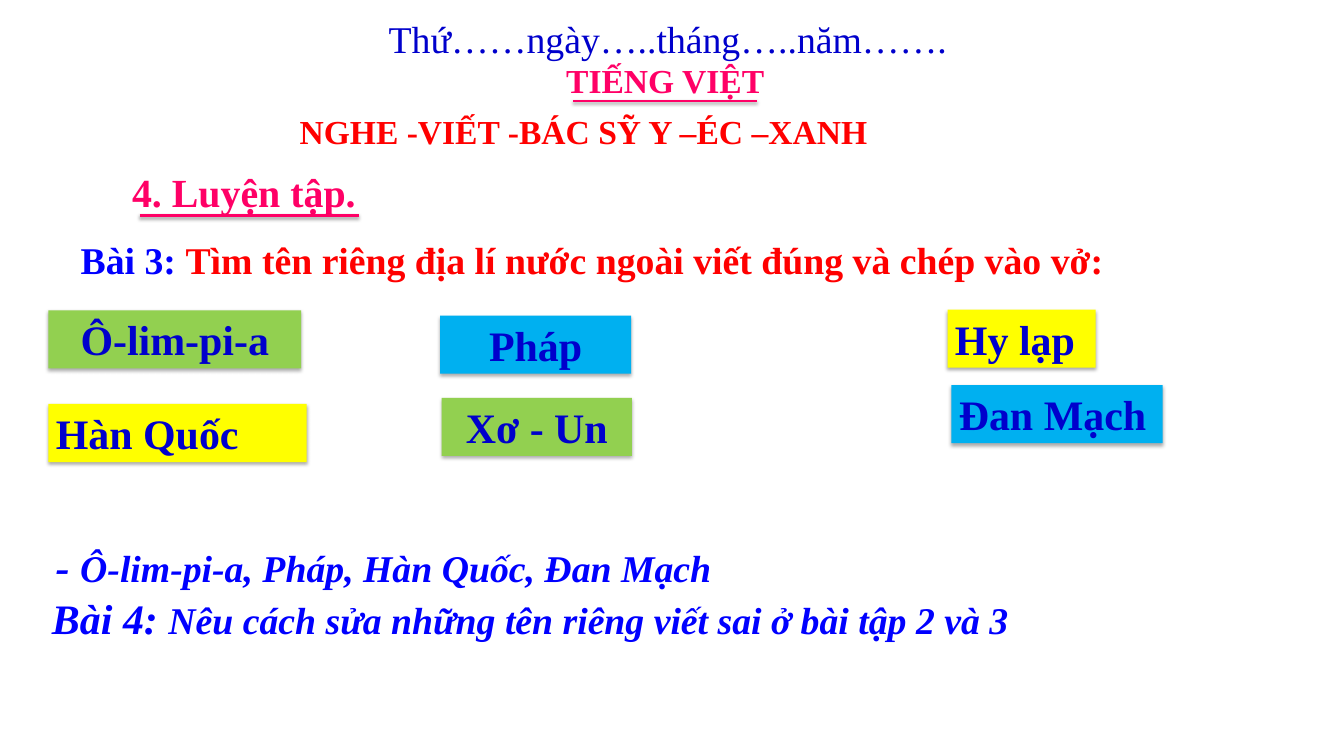
"""Build a Vietnamese spelling lesson slide on foreign place names."""
from dataclasses import dataclass

from lxml import etree
from pptx import Presentation, util as u
from pptx.dml.color import RGBColor
from pptx.enum import shapes, text
from pptx.oxml.ns import qn

COLUMNS, ROWS = 178, 100
UNIT = u.Inches(0.1)
LEFT, CENTER, JUSTIFY = text.PP_ALIGN.LEFT, text.PP_ALIGN.CENTER, text.PP_ALIGN.JUSTIFY


@dataclass(frozen=True)
class Theme:
    """Colours, type sizes and shadows of the lesson."""
    font: str = "Times New Roman"
    navy: str = "0000CC"
    blue: str = "0000FF"
    pink: str = "FF0066"
    red: str = "FF0000"
    green: str = "92D050"
    sky: str = "00B0F0"
    yellow: str = "FFFF00"
    title: int = 32
    body: int = 36
    section: int = 38
    card: int = 40
    title_shadow: tuple = (38, 3.1, 1.6)
    section_shadow: tuple = (35, 3.1, 1.8)
    card_shadow: tuple = (32, 3.5, 2.2)


THEME = Theme()


@dataclass(frozen=True)
class Box:
    """A region measured in grid columns and rows."""
    column: float
    row: float
    columns: float
    rows: float

    def inner(self, column, row, columns, rows):
        """Return a box placed relative to this one."""
        return Box(self.column + column, self.row + row, columns, rows)

    def lengths(self):
        """Return left, top, width and height as slide lengths."""
        return [round(n * UNIT) for n in (self.column, self.row, self.columns, self.rows)]


def colour(code):
    """Turn a hex code into a colour."""
    return RGBColor.from_string(code)


def add_shadow(effects, shadow):
    """Put a downward black shadow into an effect list."""
    opacity, blur, distance = shadow
    outer = etree.SubElement(effects, qn("a:outerShdw"), blurRad=str(u.Pt(blur)),
                             dist=str(u.Pt(distance)), dir="5400000", rotWithShape="0")
    black = etree.SubElement(outer, qn("a:srgbClr"), val="000000")
    etree.SubElement(black, qn("a:alpha"), val=str(opacity * 1000))


def write(shape, spans, align=LEFT, wrap=True, spacing=None, bold=True, italic=False):
    """Write one paragraph from (words, size, colour) spans."""
    frame = shape.text_frame
    frame.word_wrap = wrap
    frame.auto_size = text.MSO_AUTO_SIZE.SHAPE_TO_FIT_TEXT
    frame.vertical_anchor = text.MSO_ANCHOR.TOP
    para = frame.paragraphs[0]
    para.alignment = align
    if spacing:
        para.line_spacing = spacing
    for words, size, code in spans:
        span = para.add_run()
        span.text = words
        span.font.name = THEME.font
        span.font.size = u.Pt(size)
        span.font.bold = bold
        span.font.italic = italic
        span.font.color.rgb = colour(code)


def add_text(parent, box, spans, **style):
    """Add a text box and return its frame."""
    shape = parent.add_textbox(*box.lengths())
    write(shape, spans, **style)
    return shape.text_frame


def add_underline(parent, box, weight, shadow):
    """Draw a shadowed pink line along the top of the box."""
    left, top, width, _ = box.lengths()
    line = parent.add_connector(shapes.MSO_CONNECTOR.STRAIGHT, left, top, left + width, top)
    line.line.color.rgb = colour(THEME.pink)
    line.line.width = u.Pt(weight)
    properties = line._element.spPr
    add_shadow(etree.SubElement(properties, qn("a:effectLst")), shadow)


def add_header(page, box):
    """Place the date line and the underlined subject."""
    group = page.shapes.add_group_shape().shapes
    add_text(group, box.inner(0, 0, 76.7, 7.1),
             [("Thứ……ngày…..tháng…..năm…….", THEME.body, THEME.navy)], wrap=False, bold=False)
    add_text(group, box.inner(23.5, 5.9, 28.5, 6.4),
             [("TIẾNG VIỆT", THEME.title, THEME.pink)], wrap=False)
    add_underline(group, box.inner(25.4, 11.8, 24.4, 0), 2, THEME.title_shadow)


def add_lesson(page, box):
    """Place the centred lesson title."""
    frame = add_text(page.shapes, box,
                     [("NGHE -VIẾT -BÁC SỸ Y –ÉC –XANH", THEME.title, THEME.red)], align=CENTER)
    frame.margin_left = frame.margin_right = u.Inches(0.16)
    frame.margin_top = frame.margin_bottom = u.Inches(0.08)


def add_section(page, box):
    """Place the underlined section heading."""
    group = page.shapes.add_group_shape().shapes
    add_text(group, box, [("4. Luyện tập.", THEME.section, THEME.pink)])
    add_underline(group, box.inner(2, 6.9, 29, 0), 3, THEME.section_shadow)


def add_task(page, box):
    """Place the task sentence."""
    add_text(page.shapes, box, [
        ("Bài 3: ", THEME.body, THEME.blue),
        ("Tìm tên riêng địa lí nước ngoài viết đúng và chép vào vở:", THEME.body, THEME.red)])


def add_cards(page, box):
    """Place the coloured place-name cards."""
    cards = [
        ("Ô-lim-pi-a", 0, 0.1, 33.5, THEME.green, CENTER),
        ("Hy lạp", 119.1, 0, 19.6, THEME.yellow, LEFT),
        ("Pháp", 51.9, 0.8, 25.3, THEME.sky, CENTER),
        ("Đan Mạch", 119.6, 10, 28, THEME.sky, LEFT),
        ("Hàn Quốc", 0, 12.5, 34.2, THEME.yellow, LEFT),
        ("Xơ - Un", 52.1, 11.7, 25.2, THEME.green, CENTER),
    ]
    for name, column, row, columns, fill, align in cards:
        place = box.inner(column, row, columns, 7.7)
        card = page.shapes.add_shape(shapes.MSO_SHAPE.RECTANGLE, *place.lengths())
        card.fill.solid()
        card.fill.fore_color.rgb = colour(fill)
        card.line.fill.background()
        card.shadow.inherit = False
        add_shadow(card._element.spPr.find(qn("a:effectLst")), THEME.card_shadow)
        write(card, [(name, THEME.card, THEME.navy)], align=align)


def add_answers(page, box):
    """Place the answer line and the next task."""
    lines = [
        (box.inner(0.5, 0, 100.6, 8.4), "- ", "Ô-lim-pi-a, Pháp, Hàn Quốc, Đan Mạch"),
        (box.inner(0, 6.9, 129.2, 8.4), "Bài 4: ",
         "Nêu cách sửa những tên riêng viết sai ở bài tập 2 và 3"),
    ]
    for place, lead, words in lines:
        add_text(page.shapes, place,
                 [(lead, THEME.card, THEME.blue), (words, THEME.body, THEME.blue)],
                 align=JUSTIFY, spacing=1.2, italic=True)


def main():
    """Build and save the deck."""
    deck = Presentation()
    deck.slide_width, deck.slide_height = COLUMNS * UNIT, ROWS * UNIT
    page = deck.slides.add_slide(deck.slide_layouts[6])
    add_header(page, Box(50.5, 1.6, 76.7, 12.3))
    add_task(page, Box(9.7, 30.9, 158.5, 7.1))
    add_section(page, Box(16.5, 21.7, 45.8, 7.4))
    add_cards(page, Box(6.4, 41, 147.6, 20.2))
    add_lesson(page, Box(34.8, 13.9, 85, 7))
    add_answers(page, Box(5.9, 69.8, 129.2, 15.3))
    deck.save("out.pptx")


if __name__ == "__main__":
    main()
